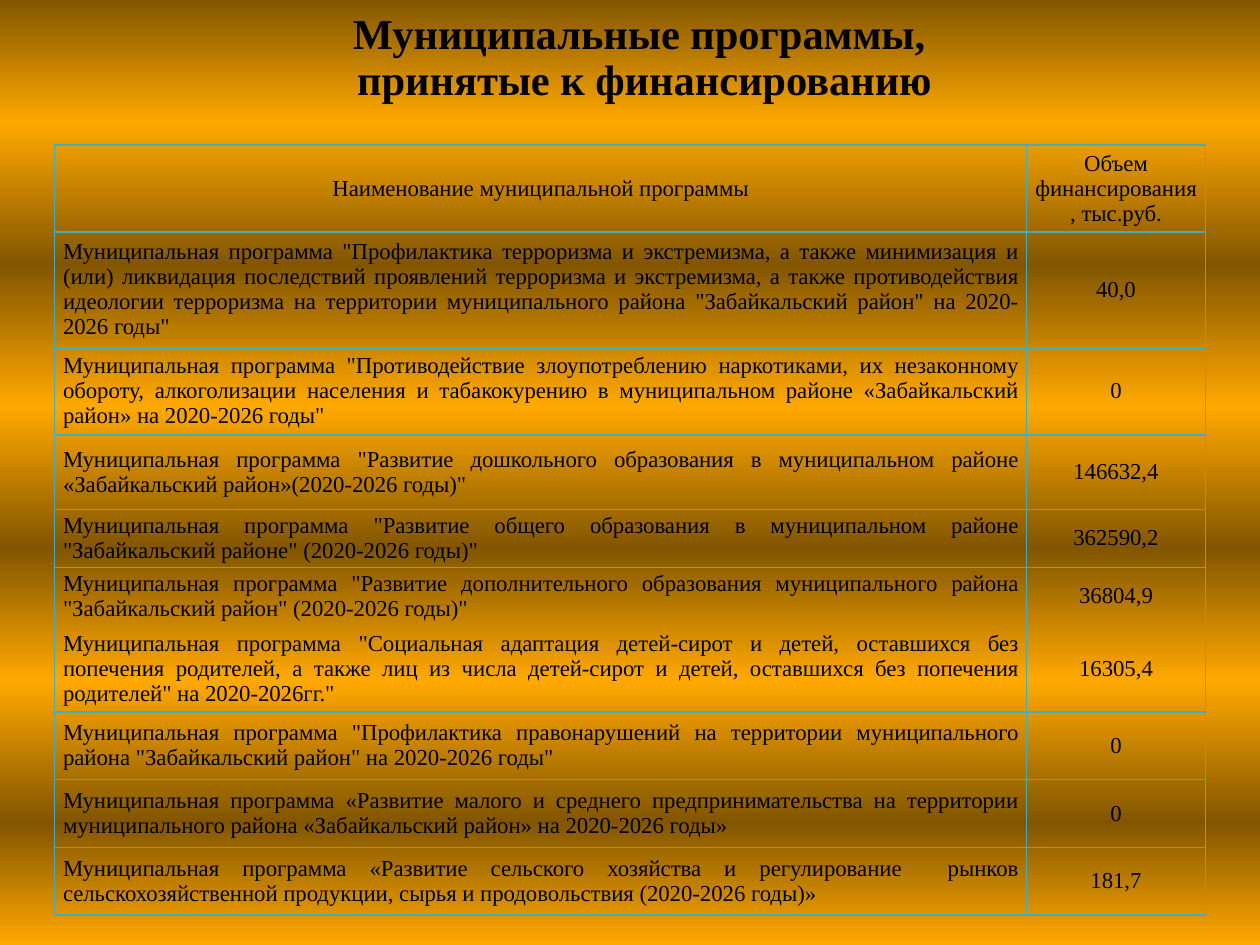
from lxml import etree
from pptx import Presentation
from pptx.dml.color import RGBColor
from pptx.enum.text import MSO_ANCHOR, PP_ALIGN
from pptx.oxml.ns import qn
from pptx.util import Pt

# Content
TITLE = "Муниципальные программы, \vпринятые к финансированию"
HEADER = ("Наименование муниципальной программы", "Объем финансирования, тыс.руб.")
# Name, funding, row height
PROGRAMS = [
    ('Муниципальная программа "Профилактика терроризма и экстремизма, а также минимизация и (или) '
     'ликвидация последствий проявлений терроризма и экстремизма, а также противодействия идеологии '
     'терроризма на территории муниципального района "Забайкальский район" на 2020-2026 годы"',
     "40,0", 66.3),
    ('Муниципальная программа "Противодействие злоупотреблению наркотиками, их незаконному обороту, '
     'алкоголизации населения и табакокурению в муниципальном районе «Забайкальский район» '
     'на 2020-2026 годы"', "0", 49.7),
    ('Муниципальная программа "Развитие дошкольного образования в муниципальном районе '
     '«Забайкальский район»(2020-2026 годы)"', "146632,4", 42.5),
    ('Муниципальная программа "Развитие общего образования в муниципальном районе '
     '"Забайкальский районе" (2020-2026 годы)"', "362590,2", 33.1),
    ('Муниципальная программа "Развитие дополнительного образования муниципального района '
     '"Забайкальский район" (2020-2026 годы)"', "36804,9", 33.1),
    ('Муниципальная программа "Социальная адаптация детей-сирот и детей, оставшихся без попечения '
     'родителей, а также лиц из числа детей-сирот и детей, оставшихся без попечения родителей" '
     'на 2020-2026гг."', "16305,4", 49.7),
    ('Муниципальная программа "Профилактика правонарушений на территории муниципального района '
     '"Забайкальский район" на 2020-2026 годы"', "0", 38.7),
    ('Муниципальная программа «Развитие малого и среднего предпринимательства на территории '
     'муниципального района «Забайкальский район» на 2020-2026 годы»', "0", 38.7),
    ('Муниципальная программа «Развитие сельского хозяйства и регулирование  рынков '
     'сельскохозяйственной продукции, сырья и продовольствия (2020-2026 годы)»', "181,7", 38.7),
]
HEADER_HEIGHT = 49.7
COLUMN_WIDTHS = (555.6, 102.2)

# Look
FONT = "Times New Roman"
DARK, BRIGHT = "825600", "FFA800"
STOPS = (0, 13, 28, 43, 58, 72, 87, 100)
STRONG = ("41AEBD", 1)
FAINT = ("C48C20", 0.25)
# Rules below table rows that differ from the strong one
RULES_BELOW = {3: FAINT, 4: FAINT, 5: None, 8: FAINT}


def color(hex_value):
    return RGBColor.from_string(hex_value)


def add_solid(parent, hex_value):
    fill = etree.SubElement(parent, qn("a:solidFill"))
    etree.SubElement(fill, qn("a:srgbClr"), val=hex_value)


def set_font(paragraph, size, bold=False):
    font = paragraph.font
    font.name, font.size, font.bold = FONT, Pt(size), bold
    font.color.rgb = color("000000")


def set_borders(cell, rules):
    """Rules come in the order left, right, top, bottom, before the cell fill."""
    properties = cell._tc.get_or_add_tcPr()
    for index, (side, rule) in enumerate(zip("LRTB", rules)):
        line = etree.Element(qn(f"a:ln{side}"))
        if rule:
            line.set("w", str(int(Pt(rule[1]))))
            add_solid(line, rule[0])
        else:
            etree.SubElement(line, qn("a:noFill"))
        properties.insert(index, line)


presentation = Presentation()
presentation.slide_width, presentation.slide_height = Pt(720), Pt(540)
slide = presentation.slides.add_slide(presentation.slide_layouts[5])

# Striped background
background = slide.background.fill
background.gradient()
background.gradient_angle = 270
stop_list = slide.element.find(".//" + qn("a:gsLst"))
for stop in list(stop_list):
    stop_list.remove(stop)
for index, position in enumerate(STOPS):
    stop = etree.SubElement(stop_list, qn("a:gs"), pos=str(position * 1000))
    etree.SubElement(stop, qn("a:srgbClr"), val=BRIGHT if index % 2 else DARK)

# Title
title = slide.shapes.title
title.left, title.top, title.width, title.height = Pt(16.6), Pt(11.5), Pt(703.4), Pt(44.6)
title.text_frame.text = TITLE
title.text_frame.vertical_anchor = MSO_ANCHOR.MIDDLE
heading = title.text_frame.paragraphs[0]
heading.alignment, heading.line_spacing = PP_ALIGN.CENTER, 0.9
set_font(heading, 24.3, bold=True)

# Table of programs
rows = [(*HEADER, HEADER_HEIGHT)] + PROGRAMS
table = slide.shapes.add_table(
    len(rows), 2, Pt(31), Pt(82.8), Pt(sum(COLUMN_WIDTHS)), Pt(sum(row[2] for row in rows))
).table
table.first_row = table.horz_banding = False
for column, width in zip(table.columns, COLUMN_WIDTHS):
    column.width = Pt(width)

for r, (name, funding, height) in enumerate(rows):
    table.rows[r].height = Pt(height)
    above, below = (RULES_BELOW.get(i, STRONG) for i in (r - 1, r))
    for c, text in enumerate((name, funding)):
        cell = table.cell(r, c)
        cell.text = text
        cell.fill.background()
        cell.vertical_anchor = MSO_ANCHOR.MIDDLE
        cell.margin_left = cell.margin_right = Pt(5)
        cell.margin_top = cell.margin_bottom = 0
        paragraph = cell.text_frame.paragraphs[0]
        paragraph.alignment = PP_ALIGN.JUSTIFY if r and c == 0 else PP_ALIGN.CENTER
        set_font(paragraph, 13)
        set_borders(cell, (STRONG, FAINT if c else STRONG, above, below))

presentation.save("out.pptx")
